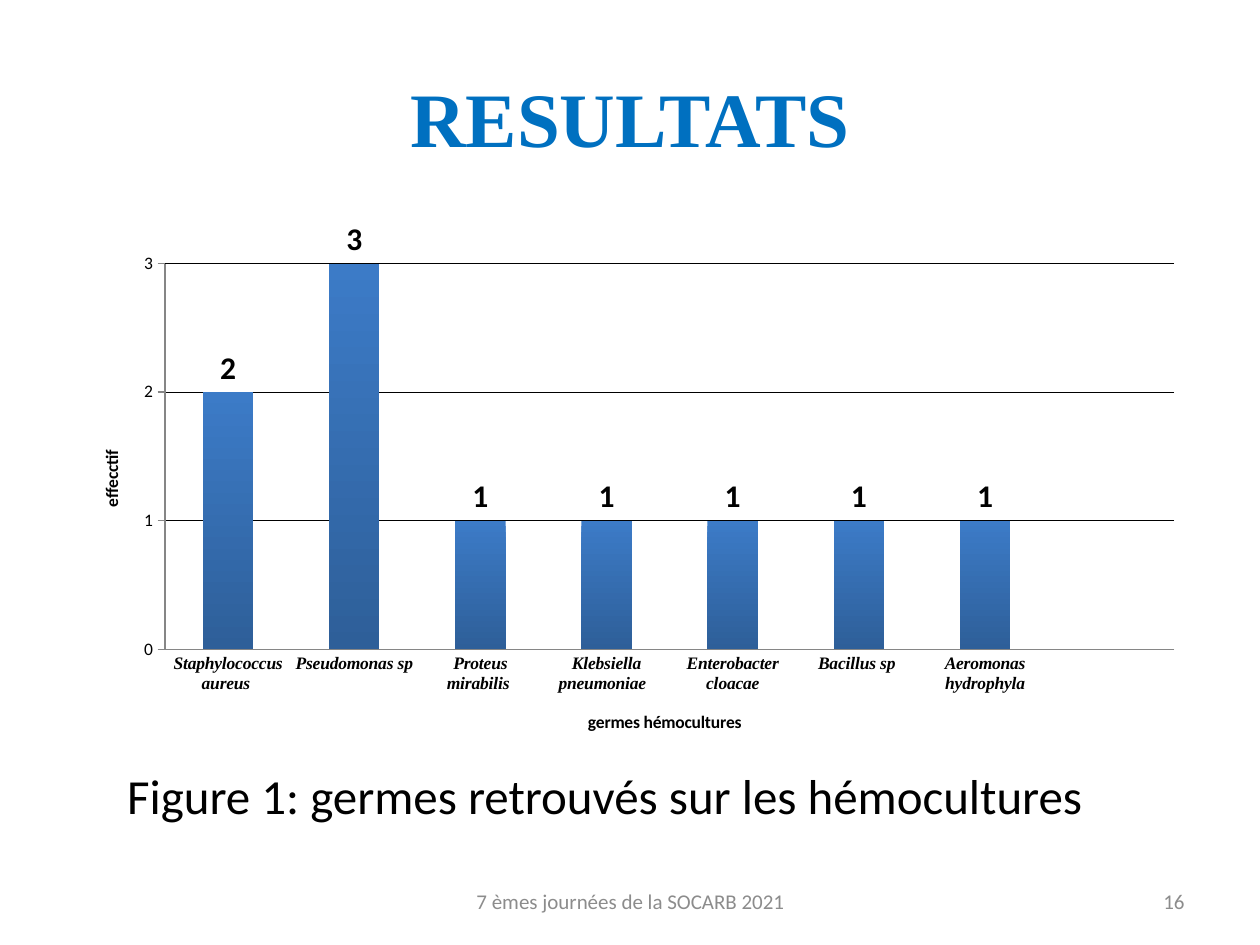
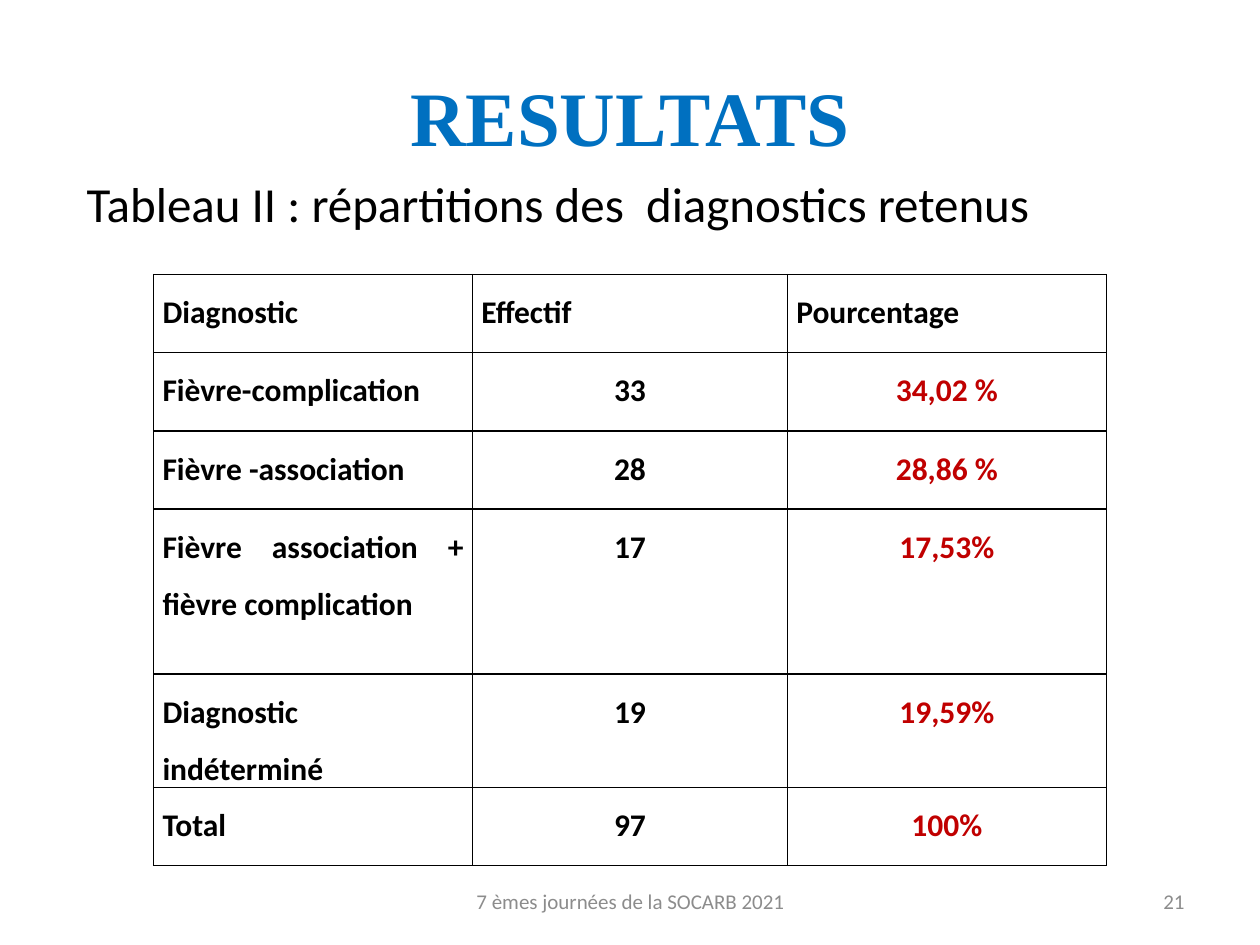
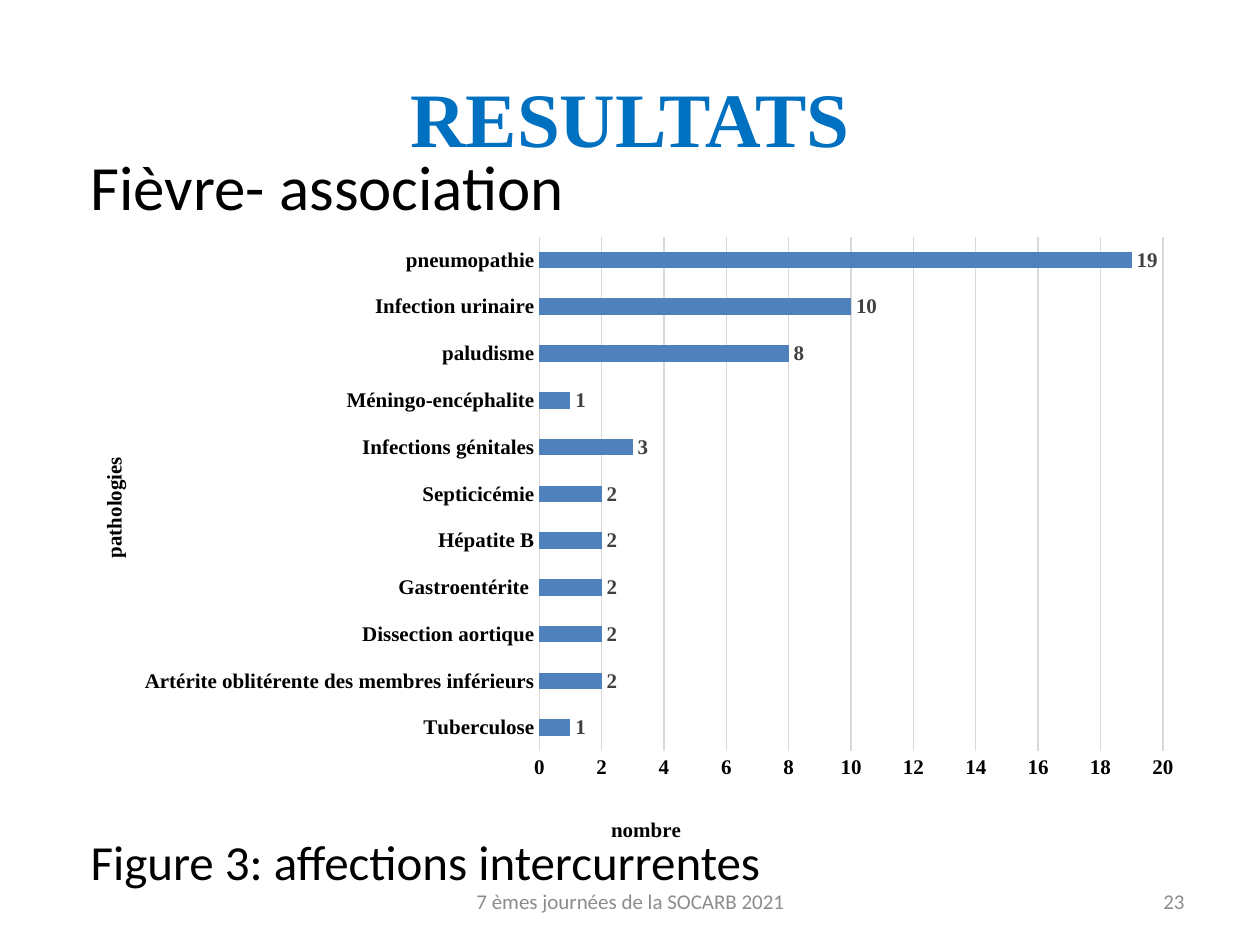
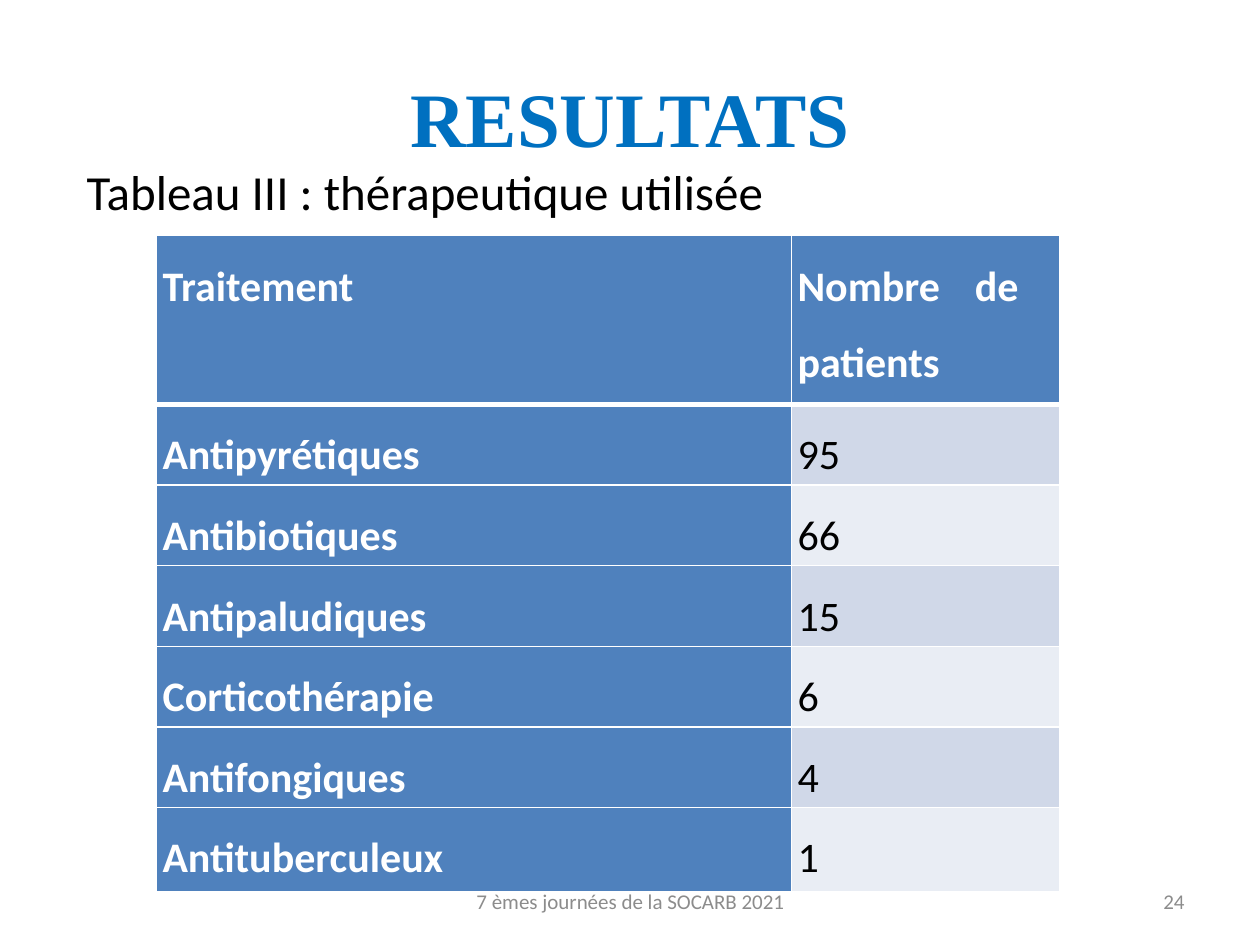
from dataclasses import dataclass

from lxml import etree
from pptx import Presentation
from pptx.chart.data import CategoryChartData
from pptx.dml.color import RGBColor
from pptx.enum.chart import XL_CHART_TYPE, XL_LABEL_POSITION, XL_TICK_MARK
from pptx.enum.text import MSO_ANCHOR, PP_ALIGN
from pptx.oxml.ns import qn
from pptx.util import Inches, Pt

COLUMN, BAR = XL_CHART_TYPE.COLUMN_CLUSTERED, XL_CHART_TYPE.BAR_CLUSTERED
OUTSIDE = XL_LABEL_POSITION.OUTSIDE_END
NO_TICK, OUT_TICK = XL_TICK_MARK.NONE, XL_TICK_MARK.OUTSIDE
LEFT, CENTER, RIGHT = PP_ALIGN.LEFT, PP_ALIGN.CENTER, PP_ALIGN.RIGHT
JUSTIFY = PP_ALIGN.JUSTIFY
TOP, MIDDLE = MSO_ANCHOR.TOP, MSO_ANCHOR.MIDDLE


@dataclass(frozen=True)
class Theme:
    """Colours, fonts and type sizes shared by the slides."""
    title: str = "0070C0"
    black: str = "000000"
    white: str = "FFFFFF"
    red: str = "C00000"
    muted: str = "8C8C8C"
    bar: str = "4F81BD"
    shade: tuple = ("3C7BC7", "2E5F99")
    bands: tuple = ("D0D8E8", "E9EDF4")
    grid: str = "D9D9D9"
    axis: str = "868686"
    label: str = "404040"
    sans: str = "Calibri"
    serif: str = "Times New Roman"
    head: int = 44
    lead: int = 36
    note: int = 28
    large: int = 24
    body: int = 18
    small: int = 12
    tiny: int = 10


T = Theme()
FOOTER = "7 èmes journées de la SOCARB 2021"

GERMS = (("Staphylococcus aureus ", 2), ("Pseudomonas sp  ", 3),
         ("Proteus mirabilis ", 1), ("Klebsiella pneumoniae  ", 1),
         ("Enterobacter cloacae", 1), ("Bacillus sp ", 1),
         ("Aeromonas hydrophyla", 1), (" ", None))

CASES = (("Tuberculose", 1),
         ("Artérite oblitérente des membres inférieurs", 2),
         ("Dissection aortique", 2), ("Gastroentérite ", 2),
         ("Hépatite B", 2), ("Septicicémie", 2), ("Infections génitales", 3),
         ("Méningo-encéphalite", 1), ("paludisme", 8),
         ("Infection urinaire", 10), ("pneumopathie", 19))

FINDINGS = (("Diagnostic", "Effectif ", "Pourcentage "),
            ("Fièvre-complication", "33", "34,02 %"),
            ("Fièvre -association", "28", "28,86 %"),
            ("Fièvre association + fièvre complication", "17", "17,53%"),
            ("Diagnostic indéterminé", "19", "19,59%"),
            ("Total ", "97", "100%"))

DRUGS = (("Traitement ", "Nombre de  patients "), ("Antipyrétiques ", "95"),
         ("Antibiotiques ", "66"), ("Antipaludiques ", "15"),
         ("Corticothérapie ", "6"), ("Antifongiques ", "4"),
         ("Antituberculeux ", "1"))


def rgb(code):
    """Return the colour for a hex code."""
    return RGBColor.from_string(code)


def put(item, **values):
    """Set each named value on an item."""
    for name, value in values.items():
        setattr(item, name, value)


def style(font, size, color=T.black, name=T.sans, bold=False, italic=False):
    """Format a font."""
    put(font, size=Pt(size), name=name, bold=bold, italic=italic)
    font.color.rgb = rgb(color)


def write(frame, text, align=LEFT, **look):
    """Write one formatted paragraph and return it."""
    para = frame.paragraphs[0]
    para.alignment = align
    run = para.add_run()
    run.text = text
    style(run.font, **look)
    return para


def label(slide, box, text, align=LEFT, anchor=TOP, **look):
    """Add a wrapped text box."""
    frame = slide.shapes.add_textbox(*map(Inches, box)).text_frame
    put(frame, word_wrap=True, vertical_anchor=anchor)
    write(frame, text, align, **look)


def page(deck, number, top=0.3):
    """Add a slide with its title, footer and number."""
    slide = deck.slides.add_slide(deck.slide_layouts[5])
    title = slide.shapes.title
    put(title, left=Inches(0.5), top=Inches(top), width=Inches(9),
        height=Inches(1.25))
    title.text_frame.vertical_anchor = MIDDLE
    write(title.text_frame, "RESULTATS", CENTER, size=T.head, color=T.title,
          name=T.serif, bold=True)
    look = {"anchor": MIDDLE, "size": T.small, "color": T.muted}
    label(slide, (3.42, 6.95, 3.17, 0.4), FOOTER, CENTER, **look)
    label(slide, (7.17, 6.95, 2.33, 0.4), str(number), RIGHT, **look)
    return slide


def place(host, **spots):
    """Fix a chart part at fractions of the chart's size."""
    layout = host.find(qn("c:layout"))
    if layout is None:
        layout = etree.Element(qn("c:layout"))
        host.insert(len(host.findall(qn("c:tx"))), layout)
    manual = etree.SubElement(layout, qn("c:manualLayout"))
    if "w" in spots:
        etree.SubElement(manual, qn("c:layoutTarget")).set("val", "inner")
    for key in ("x", "y"):
        etree.SubElement(manual, qn(f"c:{key}Mode")).set("val", "edge")
    for key, value in spots.items():
        etree.SubElement(manual, qn(f"c:{key}")).set("val", str(value))


def name_axis(axis, text, x, y, **look):
    """Title an axis at a fixed spot."""
    write(axis.axis_title.text_frame, text, CENTER, bold=True, **look)
    place(axis.axis_title._element, x=x, y=y)


def graph(slide, box, kind, rows, gap, area):
    """Add a plain one-series bar chart."""
    data = CategoryChartData(number_format="0")
    data.categories = [name for name, _ in rows]
    data.add_series("Series 1", [value for _, value in rows])
    chart = slide.shapes.add_chart(kind, *map(Inches, box), data).chart
    put(chart, has_title=False, has_legend=False)
    style(chart.font, T.tiny)
    plot = chart.plots[0]
    put(plot, gap_width=gap, vary_by_categories=False, has_data_labels=True)
    put(plot.data_labels, show_value=True, position=OUTSIDE)
    fill = plot.series[0].format.fill
    fill.solid()
    fill.fore_color.rgb = rgb(T.bar)
    put(chart.category_axis, major_tick_mark=NO_TICK, has_major_gridlines=False)
    put(chart.value_axis, minimum_scale=0, has_major_gridlines=True)
    place(chart._chartSpace.find(".//" + qn("c:plotArea")), **area)
    return chart


def stroke(line, color, width):
    """Colour and size a line."""
    line.color.rgb = rgb(color)
    line.width = Pt(width)


def germ_chart(slide, box):
    """Draw the germ counts as shaded columns."""
    chart = graph(slide, box, COLUMN, GERMS, 150,
                  {"x": 0.09, "y": 0.08, "w": 0.89, "h": 0.73})
    cat, val = chart.category_axis, chart.value_axis
    plot = chart.plots[0]
    style(plot.data_labels.font, T.body, bold=True)
    fill = plot.series[0].format.fill
    fill.gradient()
    fill.gradient_angle = 270
    for stop, code in zip(fill.gradient_stops, T.shade):
        stop.color.rgb = rgb(code)
    put(val, maximum_scale=3, major_unit=1, major_tick_mark=OUT_TICK)
    stroke(val.major_gridlines.format.line, T.black, 0.5)
    for axis in (cat, val):
        stroke(axis.format.line, T.axis, 0.75)
    style(cat.tick_labels.font, T.tiny, name=T.serif, bold=True, italic=True)
    name_axis(cat, "germes hémocultures", 0.46, 0.92, size=T.tiny)
    name_axis(val, "effecctif ", 0.03, 0.42, size=T.tiny)


def case_chart(slide, box):
    """Draw the associated illnesses as flat bars."""
    chart = graph(slide, box, BAR, CASES, 182,
                  {"x": 0.42, "y": 0.02, "w": 0.55, "h": 0.83})
    cat, val = chart.category_axis, chart.value_axis
    look = {"size": T.small, "name": T.serif}
    style(chart.plots[0].data_labels.font, color=T.label, bold=True, **look)
    put(val, maximum_scale=20, major_unit=2, major_tick_mark=NO_TICK)
    val.format.line.fill.background()
    for line in (val.major_gridlines.format.line, cat.format.line):
        stroke(line, T.grid, 0.75)
    for axis in (cat, val):
        style(axis.tick_labels.font, bold=True, **look)
    name_axis(cat, "pathologies", 0.03, 0.37, **look)
    name_axis(val, "nombre", 0.48, 0.95, **look)


def edge(cell, color, widths):
    """Rule the left, right, top and bottom of a cell."""
    props = cell._tc.get_or_add_tcPr()
    for spot, (side, width) in enumerate(zip("LRTB", widths)):
        line = etree.Element(qn(f"a:ln{side}"), w=str(Pt(width)))
        fill = etree.SubElement(line, qn("a:solidFill"))
        etree.SubElement(fill, qn("a:srgbClr"), val=color)
        props.insert(spot, line)


def grid(slide, box, rows, widths, heights, pad, paint):
    """Add a table whose cells are formatted by the paint rule."""
    table = slide.shapes.add_table(len(rows), len(widths),
                                   *map(Inches, box)).table
    put(table, first_row=False, horz_banding=False)
    for col, width in zip(table.columns, widths):
        col.width = Inches(width)
    for row, height in zip(table.rows, heights):
        row.height = Inches(height)
    for r, texts in enumerate(rows):
        for c, text in enumerate(texts):
            cell = table.cell(r, c)
            put(cell, margin_left=Inches(pad), margin_right=Inches(pad),
                margin_top=0, margin_bottom=0)
            look, back, rule, widths = paint(r, c)
            para = write(cell.text_frame, text, **look)
            put(para, line_spacing=1.5, space_after=Pt(8))
            if back:
                cell.fill.solid()
                cell.fill.fore_color.rgb = rgb(back)
            else:
                cell.fill.background()
            edge(cell, rule, widths)


def ruled(r, c):
    """Format a cell of the ruled table."""
    look = {"size": T.body, "bold": True,
            "align": CENTER if r and c else JUSTIFY,
            "color": T.red if r and c == 2 else T.black}
    return look, None, T.black, (1, 1, 1, 1)


def banded(r, c):
    """Format a cell of the banded table."""
    value = bool(r and c)
    look = {"size": T.large, "align": JUSTIFY, "bold": not value,
            "color": T.black if value else T.white}
    back = T.bands[(r - 1) % 2] if value else T.bar
    return look, back, T.white, (1, 1, 3 if r == 1 else 1, 1 if r else 3)


def main():
    """Build and save the four slides."""
    deck = Presentation()
    put(deck, slide_width=Inches(10), slide_height=Inches(7.5))

    slide = page(deck, 16)
    germ_chart(slide, (0.5, 1.75, 9, 4.2))
    label(slide, (0.91, 6.03, 8.11, 0.57),
          "Figure 1: germes retrouvés sur les hémocultures", size=T.note)

    slide = page(deck, 21, 0.29)
    grid(slide, (1.22, 2.18, 7.56, 4.64), FINDINGS, (2.53, 2.5, 2.53),
         (0.62, 0.62, 0.62, 1.31, 0.62, 0.62), 0.07, ruled)
    label(slide, (0.59, 1.33, 8.47, 0.57),
          "Tableau II : répartitions des  diagnostics retenus", size=T.note)

    slide = page(deck, 23)
    case_chart(slide, (0.5, 1.78, 9, 4.95))
    label(slide, (0.62, 6.55, 5.59, 0.57),
          "Figure 3: affections intercurrentes", size=T.note)
    label(slide, (0.62, 1.12, 4.8, 1.31), "Fièvre- association", size=T.lead)

    slide = page(deck, 24)
    grid(slide, (1.24, 1.87, 7.17, 5.19), DRUGS, (5.04, 2.13),
         (1.34,) + (0.64,) * 5 + (0.67,), 0.05, banded)
    label(slide, (0.59, 1.23, 8.47, 0.57),
          "Tableau III : thérapeutique utilisée", size=T.note)

    deck.save("out.pptx")


if __name__ == "__main__":
    main()
